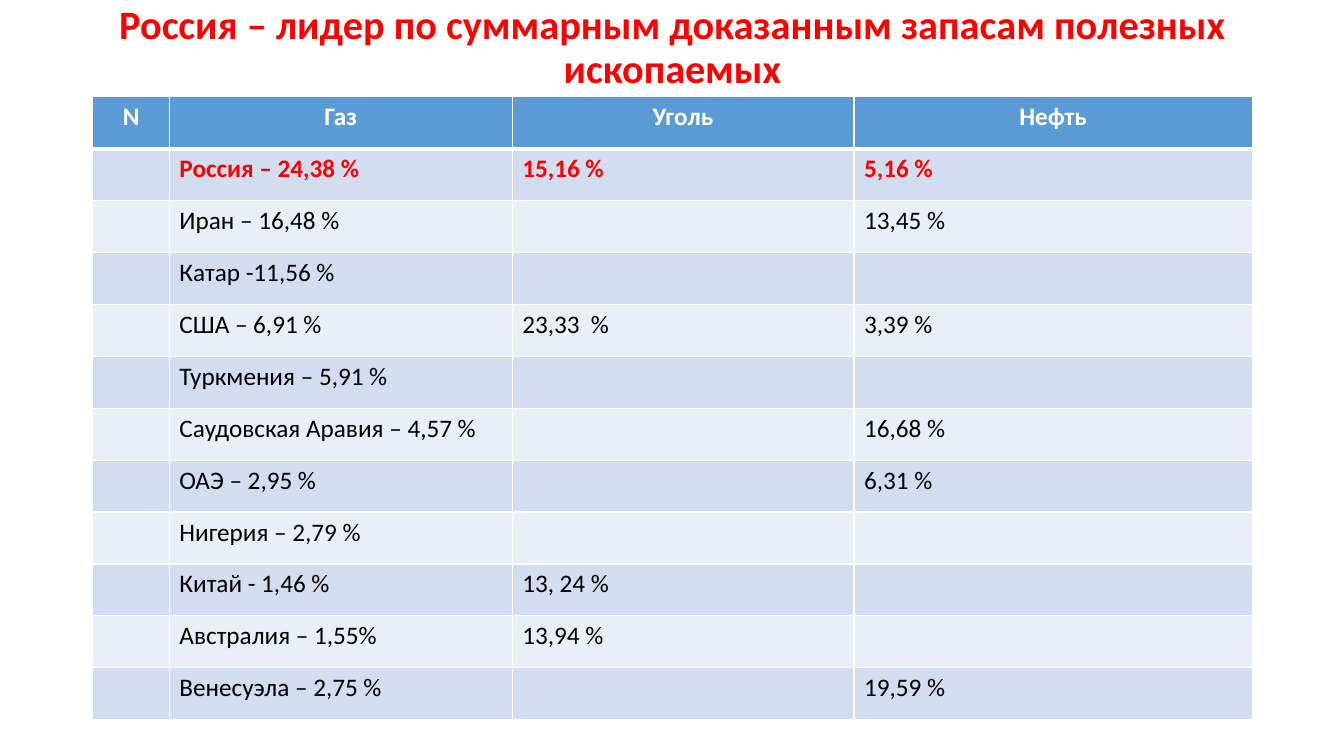
"""Build a one-slide table of proven mineral reserves by country."""
from lxml import etree
from pptx import Presentation
from pptx.dml.color import RGBColor
from pptx.enum.text import MSO_ANCHOR, MSO_AUTO_SIZE, PP_ALIGN
from pptx.oxml.ns import qn
from pptx.util import Inches, Pt

CENTER, LEFT = PP_ALIGN.CENTER, PP_ALIGN.LEFT
MIDDLE, TOP = MSO_ANCHOR.MIDDLE, MSO_ANCHOR.TOP
NO_FIT = MSO_AUTO_SIZE.NONE
TITLE_ONLY = 5
WIDTH, HEIGHT = 13.33, 7.5
COLORS = {
    "accent": "FF0000",
    "header": "5B9BD5",
    "odd": "D2DEEF",
    "even": "EAEFF7",
    "white": "FFFFFF",
    "black": "000000",
}
TITLE = "Россия – лидер по суммарным доказанным запасам полезных ископаемых"
RESERVES = [
    ("N", "Газ", "Уголь", "Нефть"),
    ("", "Россия – 24,38 %", "15,16 %", "5,16 %"),
    ("", "Иран – 16,48 %", "", "13,45 %"),
    ("", "Катар -11,56 %", "", ""),
    ("", "США – 6,91 %", "23,33  %", "3,39 %"),
    ("", "Туркмения – 5,91 %", "", ""),
    ("", "Саудовская Аравия – 4,57 %", "", "16,68 %"),
    ("", "ОАЭ – 2,95 %", "", "6,31 %"),
    ("", "Нигерия – 2,79 %", "", ""),
    ("", "Китай - 1,46 %", "13, 24 %", ""),
    ("", "Австралия – 1,55%", "13,94 %", ""),
    ("", "Венесуэла – 2,75 %", "", "19,59 %"),
]
COLUMN_SHARES = (0.76, 3.4, 3.39, 3.95)


class ReservesPage:
    """Hold the style and the current slide; lengths are shares of the slide."""

    def __init__(self, deck, font="Calibri"):
        self.deck = deck
        self.font = font
        self.page = deck.slides.add_slide(deck.slide_layouts[TITLE_ONLY])

    def frame(self, left, top, width, height):
        """Turn shares of the slide into left, top, width and height."""
        across, down = self.deck.slide_width, self.deck.slide_height
        return int(left * across), int(top * down), int(width * across), int(height * down)

    def style(self, paragraph, size, color, bold, align):
        """Format a paragraph and its runs."""
        paragraph.alignment = align
        for target in (paragraph, *paragraph.runs):
            target.font.name = self.font
            target.font.size = Pt(size)
            target.font.bold = bold
            target.font.color.rgb = RGBColor.from_string(COLORS[color])

    def title(self, text, place):
        """Place and format the title placeholder."""
        box = self.page.shapes.title
        box.left, box.top, box.width, box.height = self.frame(*place)
        box.text_frame.text = text
        box.text_frame.word_wrap = True
        box.text_frame.auto_size = NO_FIT
        box.text_frame.vertical_anchor = MIDDLE
        paragraph = box.text_frame.paragraphs[0]
        paragraph.line_spacing = 0.9
        self.style(paragraph, 28.8, "accent", True, CENTER)

    def borders(self, cell, top, bottom):
        """Draw white borders around a cell, widths in points."""
        properties = cell._tc.get_or_add_tcPr()
        sides = {"a:lnL": 1, "a:lnR": 1, "a:lnT": top, "a:lnB": bottom}
        for index, (side, width) in enumerate(sides.items()):
            line = etree.Element(qn(side), w=str(Pt(width)))
            fill = etree.SubElement(line, qn("a:solidFill"))
            etree.SubElement(fill, qn("a:srgbClr"), val=COLORS["white"])
            properties.insert(index, line)

    def cell(self, cell, text, row):
        """Fill and format one cell according to its row."""
        fill = "header" if row == 0 else "odd" if row % 2 else "even"
        color = {0: "white", 1: "accent"}.get(row, "black")
        cell.fill.solid()
        cell.fill.fore_color.rgb = RGBColor.from_string(COLORS[fill])
        cell.vertical_anchor = TOP
        cell.text_frame.text = text
        align = LEFT if row else CENTER
        self.style(cell.text_frame.paragraphs[0], 18, color, row < 2, align)
        self.borders(cell, 3 if row == 1 else 1, 3 if row == 0 else 1)

    def table(self, rows, shares, place):
        """Add a table with equal rows and proportional columns."""
        left, top, width, height = self.frame(*place)
        shape = self.page.shapes.add_table(len(rows), len(shares), left, top, width, height)
        table = shape.table
        for column, share in zip(table.columns, shares):
            column.width = int(width * share / sum(shares))
        for row, texts in enumerate(rows):
            table.rows[row].height = height // len(rows)
            for column, text in enumerate(texts):
                self.cell(table.cell(row, column), text, row)


def main():
    """Build and save the deck."""
    deck = Presentation()
    deck.slide_width, deck.slide_height = Inches(WIDTH), Inches(HEIGHT)
    page = ReservesPage(deck)
    margin, width = 0.92 / WIDTH, 11.5 / WIDTH
    title_height, table_height = 0.96 / HEIGHT, 6.18 / HEIGHT
    page.title(TITLE, (margin, 0, width, title_height))
    page.table(RESERVES, COLUMN_SHARES, (margin, title_height, width, table_height))
    deck.save("out.pptx")


if __name__ == "__main__":
    main()
